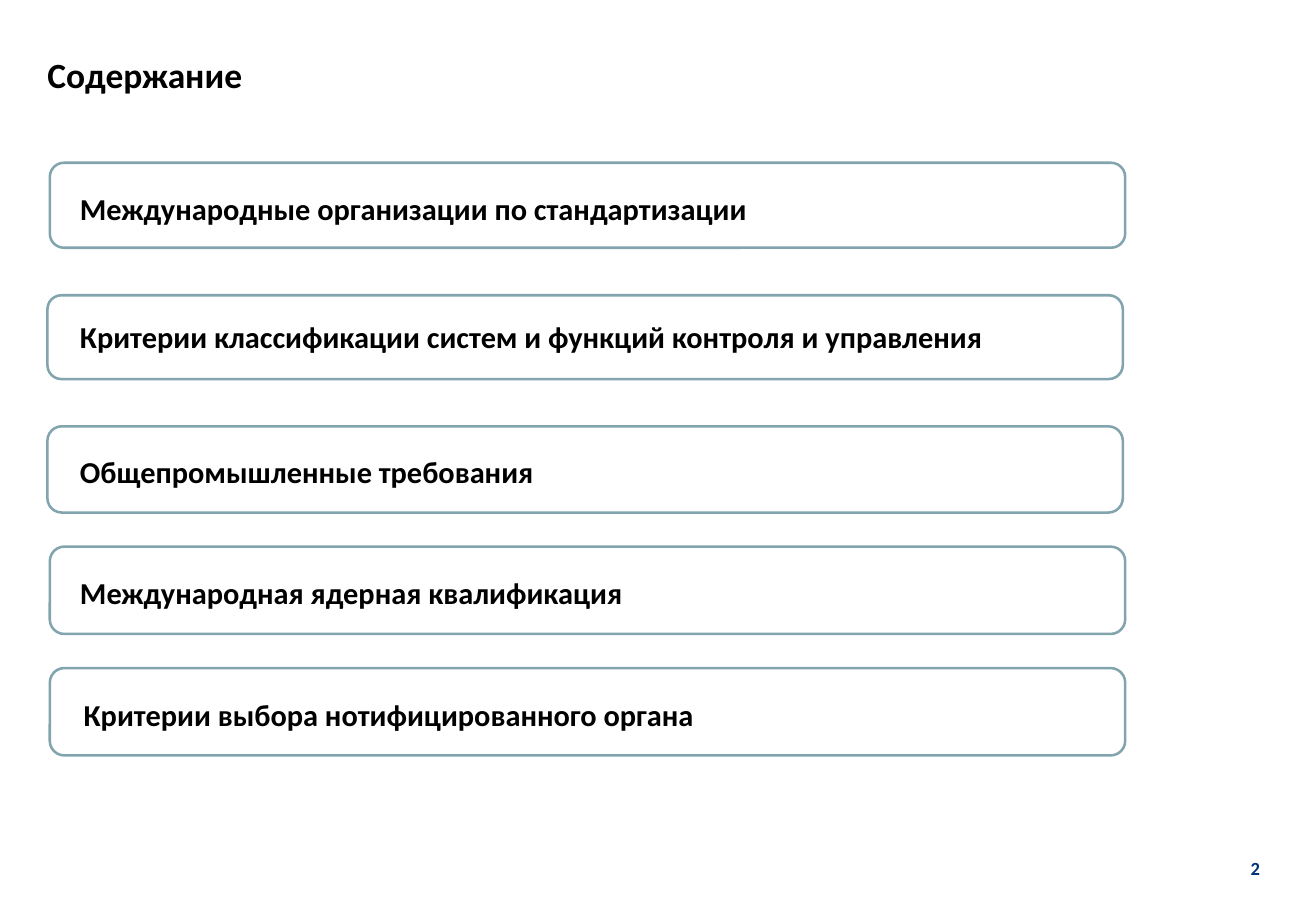
from pptx import Presentation
from pptx import util as u
from pptx.dml.color import RGBColor
from pptx.enum import shapes, text

# Content: frame left, top, height; label left, top, width, wrap; wording
TITLE = "Содержание"
PAGE_NUMBER = "2"
TOPICS = [
    ((29.5, 96.5, 50.4), (40.3, 109.4, 417.6, False),
     "Международные организации по стандартизации"),
    ((28.1, 175, 49.7), (40.3, 185, 602.6, True),
     "Критерии классификации систем и функций контроля и управления"),
    ((28.1, 252.7, 51.1), (40.3, 265, 285.8, False),
     "Общепромышленные требования"),
    ((29.5, 324, 51.8), (40.3, 337, 426.2, True),
     "Международная ядерная квалификация"),
    ((29.5, 396, 51.8), (42.5, 409, 426.2, True),
     "Критерии выбора нотифицированного органа"),
]
FRAME_WIDTH = 637.2
LABEL_HEIGHT = 28.8
FRAME_COLOUR, TEXT_COLOUR, NUMBER_COLOUR = "82A4AF", "000000", "003274"


def colour(value):
    return RGBColor.from_string(value)


def set_values(target, values):
    for name, value in values.items():
        setattr(target, name, value)


def place(shape, *box):
    names = ("left", "top", "width", "height")
    set_values(shape, {name: u.Pt(value) for name, value in zip(names, box)})


def write(shape, words, size, font_colour, frame_format, paragraph_format):
    set_values(shape.text_frame, frame_format)
    paragraph = shape.text_frame.paragraphs[0]
    paragraph.text = words
    set_values(paragraph, paragraph_format)
    set_values(paragraph.font, {"name": "Calibri", "size": u.Pt(size), "bold": True})
    paragraph.font.color.rgb = colour(font_colour)


def add_text_box(slide, box):
    return slide.shapes.add_textbox(*(u.Pt(value) for value in box))


def add_frame(slide, left, top, height):
    shape = slide.shapes.add_shape(
        shapes.MSO_SHAPE.ROUNDED_RECTANGLE,
        *(u.Pt(value) for value in (left, top, FRAME_WIDTH, height)))
    shape.shadow.inherit = False
    shape.fill.background()
    shape.line.color.rgb = colour(FRAME_COLOUR)
    shape.line.width = u.Pt(1.5)


def main():
    presentation = Presentation()
    set_values(presentation, {"slide_width": u.Pt(779.76), "slide_height": u.Pt(540)})
    slide = presentation.slides.add_slide(presentation.slide_layouts[5])

    # Title
    title = slide.shapes.title
    place(title, 28.1, 34.6, 694.8, 51.1)
    margins = dict.fromkeys(
        ("margin_left", "margin_top", "margin_right", "margin_bottom"), 0)
    write(title, TITLE, 21, TEXT_COLOUR,
          {**margins, "word_wrap": True, "vertical_anchor": text.MSO_ANCHOR.TOP,
           "auto_size": text.MSO_AUTO_SIZE.NONE},
          {"alignment": text.PP_ALIGN.LEFT, "line_spacing": 0.9})

    # Topics: a rounded frame with its label
    for frame, (left, top, width, wrap), words in TOPICS:
        add_frame(slide, *frame)
        label = add_text_box(slide, (left, top, width, LABEL_HEIGHT))
        write(label, words, 18, TEXT_COLOUR,
              {"word_wrap": wrap, "auto_size": text.MSO_AUTO_SIZE.SHAPE_TO_FIT_TEXT},
              {"alignment": text.PP_ALIGN.LEFT})

    # Page number
    number = add_text_box(slide, (727.9, 493.9, 31.7, 41.8))
    write(number, PAGE_NUMBER, 11, NUMBER_COLOUR,
          {"word_wrap": False, "vertical_anchor": text.MSO_ANCHOR.MIDDLE},
          {"alignment": text.PP_ALIGN.CENTER})

    presentation.save("out.pptx")


if __name__ == "__main__":
    main()
